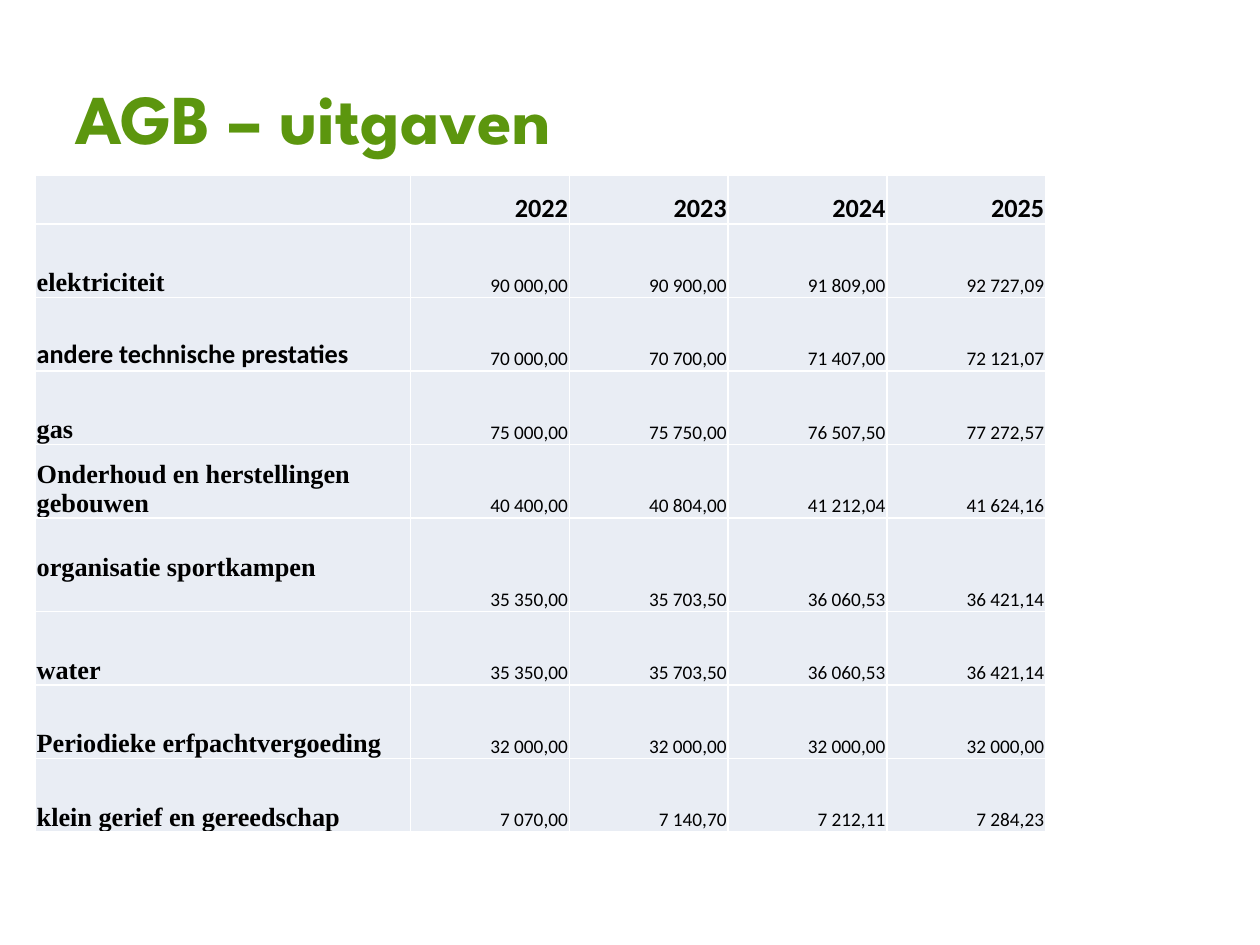
from lxml import etree
from pptx import Presentation
from pptx import util as u
from pptx.dml.color import RGBColor
from pptx.enum import text
from pptx.oxml import ns

GREEN = RGBColor(0x5C, 0x96, 0x0E)
BLACK = RGBColor(0, 0, 0)
PALE_BLUE = RGBColor(0xE9, 0xED, 0xF4)
WHITE = RGBColor(0xFF, 0xFF, 0xFF)

SANS = "Calibri"
SERIF = "Times New Roman"
TITLE_FONT = "League Spartan"

YEARS = ("", "2022", "2023", "2024", "2025")
EXPENSES = (
    ("elektriciteit", "90 000,00", "90 900,00", "91 809,00", "92 727,09"),
    ("andere technische prestaties", "70 000,00", "70 700,00", "71 407,00", "72 121,07"),
    ("gas", "75 000,00", "75 750,00", "76 507,50", "77 272,57"),
    ("Onderhoud en herstellingen gebouwen", "40 400,00", "40 804,00", "41 212,04", "41 624,16"),
    ("organisatie sportkampen", "35 350,00", "35 703,50", "36 060,53", "36 421,14"),
    ("water", "35 350,00", "35 703,50", "36 060,53", "36 421,14"),
    ("Periodieke erfpachtvergoeding", "32 000,00", "32 000,00", "32 000,00", "32 000,00"),
    ("klein gerief en gereedschap", "7 070,00", "7 140,70", "7 212,11", "7 284,23"),
)
SANS_LABEL = "andere technische prestaties"
RAISED_LABEL = "organisatie sportkampen"

LABEL_WIDTH, YEAR_WIDTH = 7.57, 3.2
HEADER_HEIGHT, ROW_HEIGHT, TALL_HEIGHT = 0.98, 1.48, 1.89


def style_font(font, name, size, color, bold):
    font.name = name
    font.size = u.Pt(size)
    font.color.rgb = color
    font.bold = bold


def add_title(slide, wording):
    title = slide.shapes.title
    title.left, title.top = u.Cm(1.27), u.Cm(0.76)
    title.width, title.height = u.Cm(20.83), u.Cm(3.18)
    frame = title.text_frame
    frame.text = wording
    frame.auto_size = text.MSO_AUTO_SIZE.NONE
    frame.vertical_anchor = text.MSO_ANCHOR.MIDDLE
    heading = frame.paragraphs[0]
    heading.alignment = text.PP_ALIGN.LEFT
    style_font(heading.runs[0].font, TITLE_FONT, 40, GREEN, True)


def add_borders(cell):
    properties = cell._tc.get_or_add_tcPr()
    for position, side in enumerate(("lnL", "lnR", "lnT", "lnB")):
        line = etree.Element(ns.qn(f"a:{side}"), w=str(u.Pt(1)))
        fill = etree.SubElement(line, ns.qn("a:solidFill"))
        etree.SubElement(fill, ns.qn("a:srgbClr"), val=str(WHITE))
        properties.insert(position, line)


def fill_cell(cell, wording, font_name, size, bold, alignment):
    cell.fill.solid()
    cell.fill.fore_color.rgb = PALE_BLUE
    add_borders(cell)
    cell.vertical_anchor = text.MSO_ANCHOR.BOTTOM
    cell.margin_left = cell.margin_right = cell.margin_top = u.Cm(0.03)
    cell.margin_bottom = u.Cm(0.6 if wording == RAISED_LABEL else 0)
    cell.text_frame.text = wording
    paragraph = cell.text_frame.paragraphs[0]
    paragraph.alignment = alignment
    for styled in (paragraph, *paragraph.runs):
        style_font(styled.font, font_name, size, BLACK, bold)


def add_expense_table(slide):
    heights = [HEADER_HEIGHT] + [
        TALL_HEIGHT if expense[0] == RAISED_LABEL else ROW_HEIGHT for expense in EXPENSES
    ]
    widths = [LABEL_WIDTH] + [YEAR_WIDTH] * (len(YEARS) - 1)
    table = slide.shapes.add_table(
        len(heights), len(widths), u.Cm(0.71), u.Cm(3.54),
        u.Cm(sum(widths)), u.Cm(sum(heights)),
    ).table
    table.first_row = table.horz_banding = False
    for column, width in zip(table.columns, widths):
        column.width = u.Cm(width)
    for row, height in zip(table.rows, heights):
        row.height = u.Cm(height)

    for column, year in enumerate(YEARS):
        fill_cell(table.cell(0, column), year, SANS, 15, True, text.PP_ALIGN.RIGHT)
    for row, (label, *amounts) in enumerate(EXPENSES, 1):
        label_font = SANS if label == SANS_LABEL else SERIF
        fill_cell(table.cell(row, 0), label, label_font, 15, True, text.PP_ALIGN.LEFT)
        for column, amount in enumerate(amounts, 1):
            fill_cell(table.cell(row, column), amount, SANS, 11, False, text.PP_ALIGN.RIGHT)


def main():
    deck = Presentation()
    deck.slide_width, deck.slide_height = u.Cm(25.4), u.Cm(19.05)
    slide = deck.slides.add_slide(deck.slide_layouts.get_by_name("Title Only"))
    add_title(slide, "AGB – uitgaven")
    add_expense_table(slide)
    deck.save("out.pptx")


if __name__ == "__main__":
    main()
